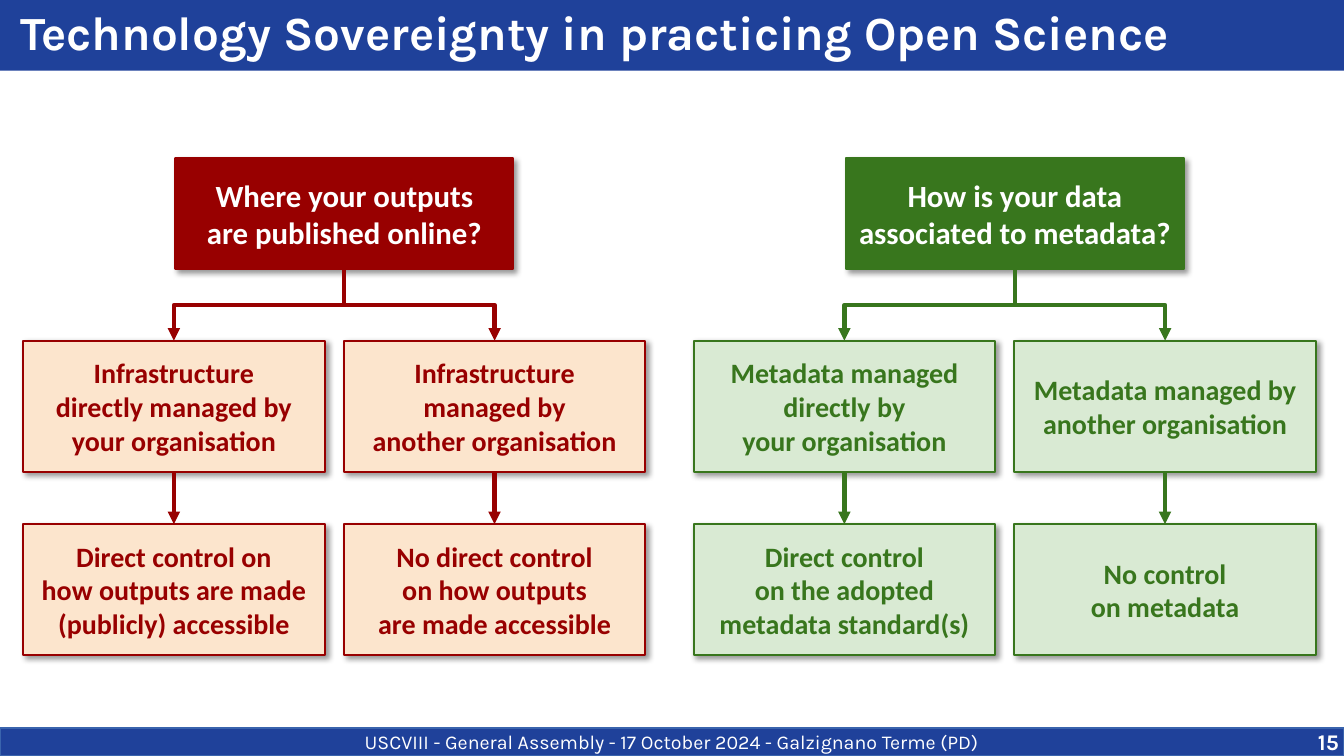
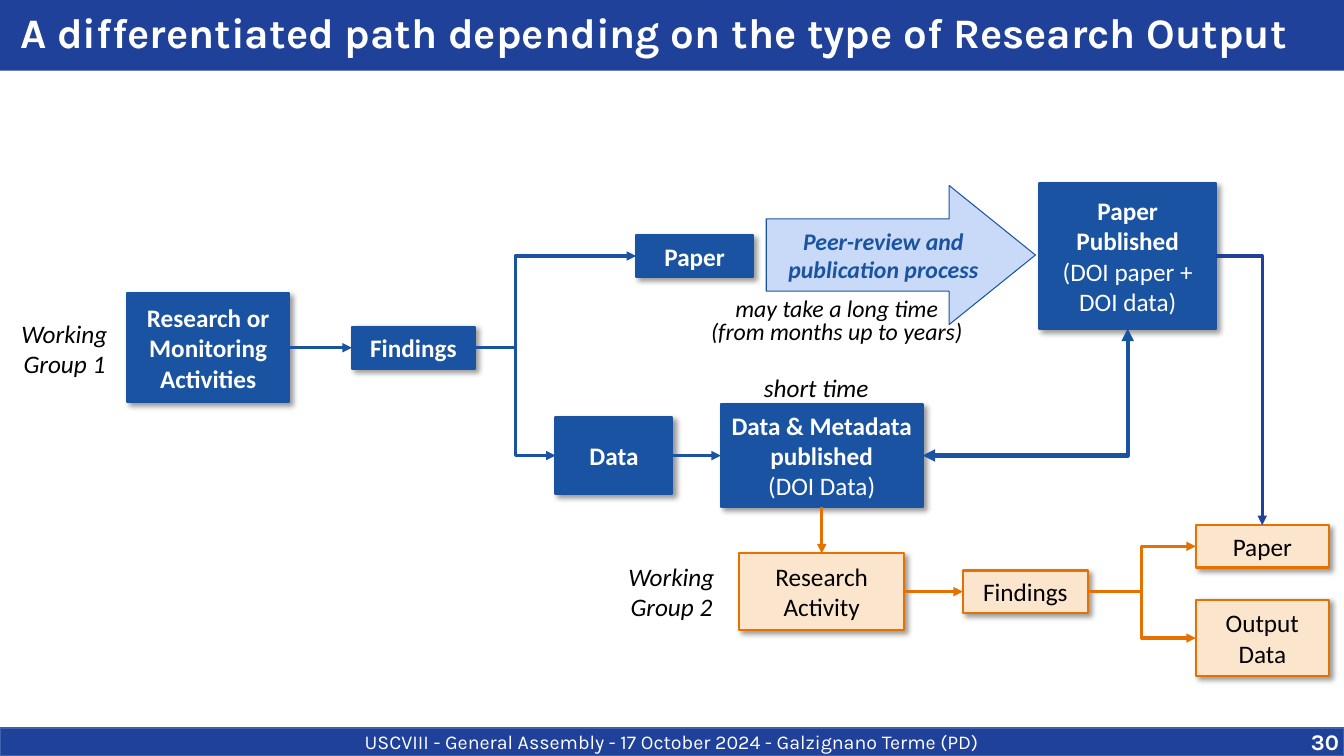
"""Build two flow-diagram slides on open science and research outputs."""
from dataclasses import dataclass

from pptx import Presentation
from pptx import util as u
from pptx.dml.color import RGBColor
from pptx.enum import shapes, text
from pptx.oxml.ns import qn
from lxml import etree

PX = 9144
TOP, LEFT, BOTTOM, RIGHT = range(4)


@dataclass(frozen=True)
class Scheme:
    fill: str
    line: str
    ink: str
    bold: bool = True


@dataclass(frozen=True)
class Theme:
    heading_font: str = "Karla"
    body_font: str = "Calibri"
    navy: str = "1F419A"
    navy_edge: str = "3A64AD"
    white: str = "FFFFFF"
    black: str = "000000"
    red_root: Scheme = Scheme("980000", "980000", "FFFFFF")
    red: Scheme = Scheme("FCE5CD", "980000", "980000")
    green_root: Scheme = Scheme("38761D", "38761D", "FFFFFF")
    green: Scheme = Scheme("D9EAD3", "38761D", "38761D")
    blue: Scheme = Scheme("1A53A1", "1A53A1", "FFFFFF")
    process: Scheme = Scheme("C9DAF8", "1A53A1", "1A53A1")
    orange: Scheme = Scheme("FCE5CD", "E57200", "000000", False)
    footer_size: int = 14
    number_size: int = 16
    note_size: int = 17
    flow_size: int = 18
    branch_size: int = 20
    root_size: int = 22


THEME = Theme()


def px(length):
    """Turn px into EMU."""
    return u.Emu(length * PX)


def rgb(code):
    """Turn a hex code into a colour."""
    return RGBColor.from_string(code)


def add_xml(parent, tag, **attributes):
    """Append a DrawingML child with attributes."""
    child = etree.SubElement(parent, qn(tag))
    for key, value in attributes.items():
        child.set(key, str(value))
    return child


def write(shape, words, size, ink, font=THEME.body_font, bold=False, italic=False,
          align=text.PP_ALIGN.CENTER, anchor=text.MSO_ANCHOR.MIDDLE,
          spacing=None, margins=(0, 5, 0, 5)):
    """Set the text of a shape and format every run alike."""
    frame = shape.text_frame
    frame.text = words
    frame.word_wrap = True
    frame.auto_size = text.MSO_AUTO_SIZE.NONE
    frame.vertical_anchor = anchor
    (frame.margin_left, frame.margin_top,
     frame.margin_right, frame.margin_bottom) = map(px, margins)
    for paragraph in frame.paragraphs:
        paragraph.alignment = align
        paragraph.line_spacing = spacing
        for run in paragraph.runs:
            run.font.name = font
            run.font.size = u.Pt(size)
            run.font.bold = bold
            run.font.italic = italic
            run.font.color.rgb = rgb(ink)


def paint(shape, fill, line, width=1.5):
    """Give a shape a flat fill and outline."""
    shape.fill.solid()
    shape.fill.fore_color.rgb = rgb(fill)
    shape.line.color.rgb = rgb(line)
    shape.line.width = u.Pt(width)
    shape.shadow.inherit = False


def cast_shadow(shape):
    """Add a soft shadow to the lower right."""
    effects = shape.element.spPr.find(qn("a:effectLst"))
    shadow = add_xml(effects, "a:outerShdw", blurRad=u.Pt(4), dist=u.Pt(3),
                     dir=45 * 60000, algn="bl", rotWithShape=0)
    colour = add_xml(shadow, "a:srgbClr", val=THEME.black)
    add_xml(colour, "a:alpha", val=40000)


def add_box(slide, at, words, scheme, size=THEME.flow_size, light_last=False):
    """Add a shadowed text box of the diagram."""
    box = slide.shapes.add_shape(shapes.MSO_SHAPE.RECTANGLE, *map(px, at))
    paint(box, scheme.fill, scheme.line)
    cast_shadow(box)
    write(box, words, size, scheme.ink, bold=scheme.bold)
    if light_last:
        for run in box.text_frame.paragraphs[-1].runs:
            run.font.bold = False
    return box


def add_note(slide, at, words, size=THEME.flow_size, spacing=None):
    """Add an italic remark beside the diagram."""
    note = slide.shapes.add_textbox(*map(px, at))
    write(note, words, size, THEME.black, italic=True, spacing=spacing,
          anchor=text.MSO_ANCHOR.TOP, margins=(0, 0, 0, 0))


def stand_upright(link):
    """Turn an elbow so that it leaves and arrives vertically."""
    run, drop = link.end_x - link.begin_x, link.end_y - link.begin_y
    middle_x, middle_y = link.begin_x + run // 2, link.begin_y + drop // 2
    link.width, link.height = abs(drop), abs(run)
    link.left, link.top = middle_x - abs(drop) // 2, middle_y - abs(run) // 2
    frame = link.element.spPr.get_or_add_xfrm()
    frame.rot = 90 if run < 0 else 270
    frame.flipH = run > 0
    frame.flipV = False


def add_link(slide, source, target, colour, sides=(RIGHT, LEFT), width=2.25,
             bend=None, two_way=False):
    """Join two boxes with an arrow, straight where they line up."""
    link = slide.shapes.add_connector(shapes.MSO_CONNECTOR.ELBOW, 0, 0, 0, 0)
    link.begin_connect(source, sides[0])
    link.end_connect(target, sides[1])
    geometry = link.element.spPr.find(qn("a:prstGeom"))
    if PX > min(link.width, link.height):
        geometry.set("prst", "line")
    elif sides == (BOTTOM, TOP):
        stand_upright(link)
    elif sides != (RIGHT, LEFT):
        geometry.set("prst", "bentConnector2")
    if bend is not None:
        add_xml(geometry.find(qn("a:avLst")), "a:gd", name="adj1", fmla=f"val {bend}")
    link.line.color.rgb = rgb(colour)
    link.line.width = u.Pt(width)
    outline = link.line._get_or_add_ln()
    if two_way:
        add_xml(outline, "a:headEnd", type="triangle")
    add_xml(outline, "a:tailEnd", type="triangle")
    add_xml(link.element.spPr, "a:effectLst")


def add_footer(layout, slide):
    """Place the shared footer band on the layout."""
    band = slide.shapes.add_shape(shapes.MSO_SHAPE.RECTANGLE,
                                  *map(px, (0, 722, 1333, 28)))
    paint(band, THEME.navy, THEME.navy_edge)
    write(band, "USCVIII - General Assembly - 17 October 2024 - Galzignano Terme (PD)",
          THEME.footer_size, THEME.white, THEME.heading_font, margins=(0, 0, 0, 0))
    layout.shapes.element.append(band.element)


def add_slide(deck, layout, heading, size, number):
    """Add a slide with its title band and number."""
    slide = deck.slides.add_slide(layout)
    title = slide.shapes.title
    title.left, title.top, title.width, title.height = map(px, (0, 0, 1333, 70))
    title.fill.solid()
    title.fill.fore_color.rgb = rgb(THEME.navy)
    write(title, heading, size, THEME.white, THEME.heading_font, bold=True,
          align=text.PP_ALIGN.LEFT, spacing=0.9, margins=(20, 0, 0, 0))
    page = slide.shapes.add_textbox(*map(px, (1248, 722, 80, 28)))
    write(page, number, THEME.number_size, THEME.white, THEME.heading_font, bold=True,
          align=text.PP_ALIGN.RIGHT, anchor=text.MSO_ANCHOR.TOP, margins=(0, 0, 0, 0))
    return slide


def add_tree(slide, left, question, branches, root_scheme, scheme):
    """Draw a question with its answers and their outcomes."""
    root = add_box(slide, (left + 151, 157, 335, 110), question, root_scheme,
                   THEME.root_size)
    for column, (answer, outcome) in enumerate(branches):
        x = left + column * 318
        choice = add_box(slide, (x, 338, 299, 130), answer, scheme, THEME.branch_size)
        result = add_box(slide, (x, 520, 299, 130), outcome, scheme, THEME.branch_size)
        for upper, lower in ((root, choice), (choice, result)):
            add_link(slide, upper, lower, scheme.line, (BOTTOM, TOP), 3)


def draw_sovereignty(slide):
    """Draw the two question trees."""
    add_tree(slide, 23, "Where your outputs\nare published online?", (
        ("Infrastructure\ndirectly managed by\nyour organisation",
         "Direct control on\nhow outputs are made\n(publicly) accessible"),
        ("Infrastructure\nmanaged by\nanother organisation",
         "No direct control\non how outputs\nare made accessible"),
    ), THEME.red_root, THEME.red)
    add_tree(slide, 688, "How is your data\nassociated to metadata?", (
        ("Metadata managed directly by\nyour organisation",
         "Direct control\non the adopted\nmetadata standard(s)"),
        ("Metadata managed by\nanother organisation", "No control\non metadata"),
    ), THEME.green_root, THEME.green)


def draw_first_group(slide):
    """Draw the path of working group 1 and return its published outputs."""
    blue = THEME.blue
    add_note(slide, (11, 316, 106, 60), "Working\nGroup 1")
    research = add_box(slide, (126, 291, 161, 108),
                       "Research or Monitoring\nActivities", blue)
    findings = add_box(slide, (349, 324, 122, 42), "Findings", blue)
    paper = add_box(slide, (631, 233, 116, 42), "Paper", blue)
    data = add_box(slide, (551, 414, 116, 76), "Data", blue)
    dataset = add_box(slide, (715, 401, 200, 102),
                      "Data & Metadata published\n(DOI Data)", blue, light_last=True)
    article = add_box(slide, (1031, 182, 175, 144),
                      "Paper\nPublished\n(DOI paper +\vDOI data)", blue, light_last=True)

    review = slide.shapes.add_shape(shapes.MSO_SHAPE.RIGHT_ARROW,
                                    *map(px, (760, 184, 267, 138)))
    review.adjustments[0], review.adjustments[1] = 0.52, 0.62
    paint(review, THEME.process.fill, THEME.process.line, 0.75)
    write(review, "Peer-review and\npublication process", THEME.note_size,
          THEME.process.ink, bold=True, italic=True, margins=(10, 5, 0, 5))
    add_note(slide, (687, 297, 286, 53), "may take a long time\n(from months up to years)",
             THEME.note_size, 0.8)
    add_note(slide, (715, 369, 189, 35), "short time")

    for source, target in ((research, findings), (findings, data), (data, dataset)):
        add_link(slide, source, target, blue.line)
    add_link(slide, findings, paper, blue.line, bend=25000)
    add_link(slide, dataset, article, blue.line, (RIGHT, BOTTOM), 3, two_way=True)
    return dataset, article


def draw_second_group(slide, dataset, article):
    """Draw the path of working group 2, which reuses the published outputs."""
    orange = THEME.orange
    add_note(slide, (613, 557, 106, 60), "Working\nGroup 2")
    activity = add_box(slide, (733, 549, 164, 76), "Research\nActivity", orange)
    findings = add_box(slide, (955, 566, 124, 42), "Findings", orange)
    paper = add_box(slide, (1186, 521, 132, 42), "Paper", orange)
    output = add_box(slide, (1186, 595, 132, 76), "Output\nData", orange)
    add_link(slide, dataset, activity, orange.line, (BOTTOM, TOP))
    for source, target in ((activity, findings), (findings, paper), (findings, output)):
        add_link(slide, source, target, orange.line)
    add_link(slide, article, paper, THEME.navy, (RIGHT, TOP))


def main():
    """Build and save the slides."""
    deck = Presentation()
    deck.slide_width, deck.slide_height = px(1333), px(750)
    layout = deck.slide_layouts[5]
    sovereignty = add_slide(deck, layout,
                            "Technology Sovereignty in practicing Open Science", 34, "15")
    add_footer(layout, sovereignty)
    draw_sovereignty(sovereignty)
    paths = add_slide(deck, layout,
                      "A differentiated path depending on the type of Research Output",
                      30, "30")
    draw_second_group(paths, *draw_first_group(paths))
    deck.save("out.pptx")


if __name__ == "__main__":
    main()
